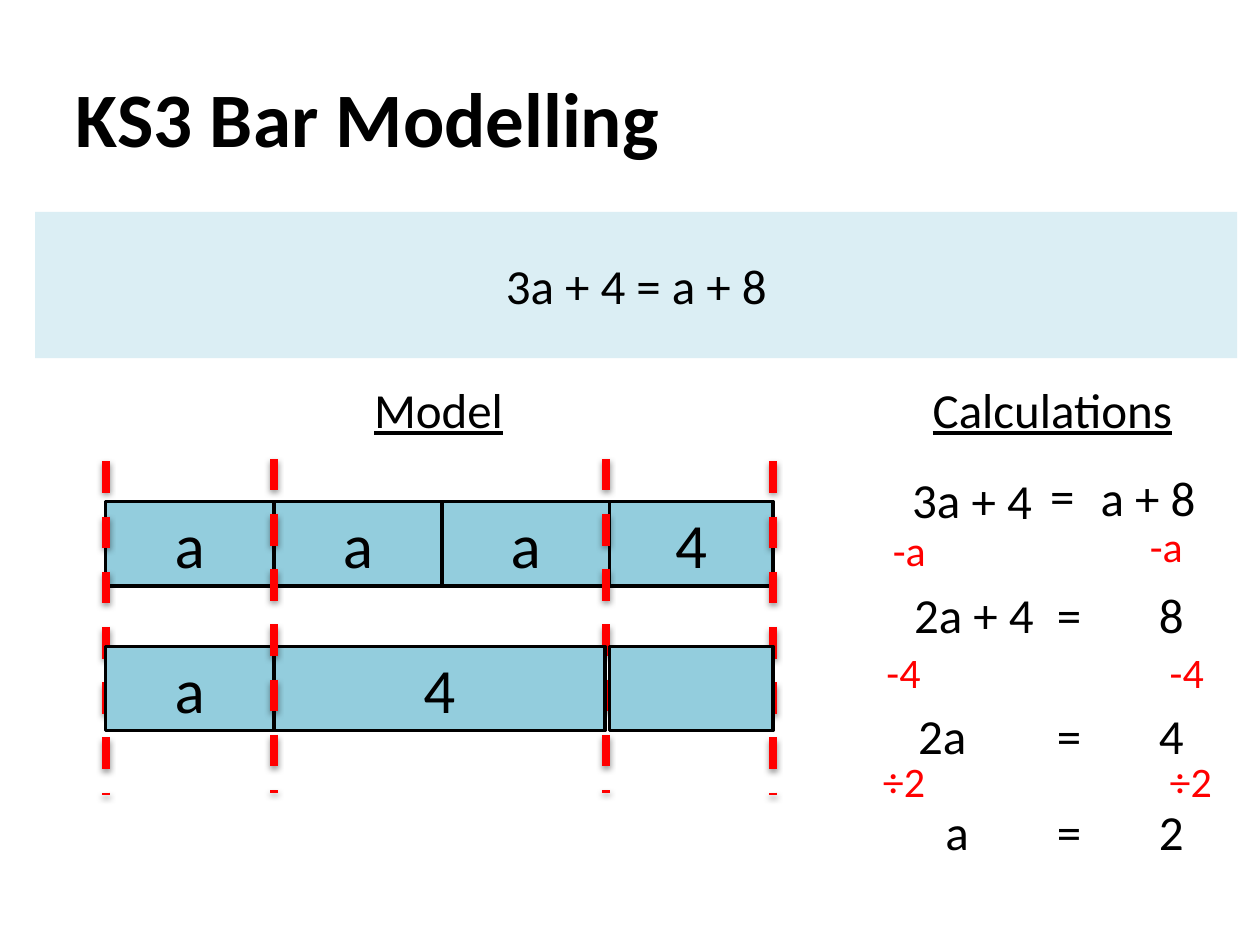
from typing import Any, NamedTuple

import pptx
import pptx.dml.color
import pptx.enum.dml
import pptx.enum.shapes
import pptx.enum.text
import pptx.oxml
import pptx.oxml.ns
import pptx.util

Cm = pptx.util.Cm
ALIGN = pptx.enum.text.PP_ALIGN
ANCHOR = pptx.enum.text.MSO_ANCHOR

BLACK, RED, WHITE = "000000", "FF0000", "FFFFFF"
BAR_FILL, BANNER_FILL = "93CDDD", "DBEEF4"
BAR_HEIGHT = 1.7
TEXT_HEIGHT = 1.35
EQUATION_TABS = ((21.55, "ctr"), (23.61, "ctr"))
OPERATION_TABS = ((23.58, "l"),)


class Box(NamedTuple):
    left: float
    top: float
    width: float
    height: float


class Bar(NamedTuple):
    left: float
    right: float
    label: str


class Token(NamedTuple):
    left: float
    top: float
    width: float
    text: str


class Step(NamedTuple):
    """A calculation line: its text begins at start, tabs are slide positions."""
    left: float
    top: float
    width: float
    start: float
    text: str
    size: int = 28
    color: str = BLACK
    tabs: tuple = EQUATION_TABS


def rgb(color: str) -> pptx.dml.color.RGBColor:
    return pptx.dml.color.RGBColor.from_string(color)


def lengths(box: Box) -> list:
    return [Cm(value) for value in box]


def write(shape: Any, text: str, size: int, color: str = BLACK,
          align: Any = ALIGN.CENTER, anchor: Any = ANCHOR.TOP,
          **font_format: Any) -> Any:
    frame = shape.text_frame
    frame.word_wrap = True
    frame.vertical_anchor = anchor
    paragraph = frame.paragraphs[0]
    paragraph.alignment = align
    run = paragraph.add_run()
    run.text = text
    values = {"name": "Calibri", "size": pptx.util.Pt(size), **font_format}
    for name, value in values.items():
        setattr(run.font, name, value)
    run.font.color.rgb = rgb(color)
    return paragraph


def add_rectangle(slide: Any, box: Box, fill: str, outlined: bool = False) -> Any:
    shape = slide.shapes.add_shape(
        pptx.enum.shapes.MSO_SHAPE.RECTANGLE, *lengths(box))
    shape.shadow.inherit = False
    shape.fill.solid()
    shape.fill.fore_color.rgb = rgb(fill)
    if outlined:
        shape.line.color.rgb = rgb(BLACK)
        shape.line.width = pptx.util.Pt(2)
    else:
        shape.line.fill.background()
    return shape


def add_bars(slide: Any, top: float, bars: tuple) -> None:
    for bar in bars:
        box = Box(bar.left, top, bar.right - bar.left, BAR_HEIGHT)
        shape = add_rectangle(slide, box, BAR_FILL, outlined=True)
        if bar.label:
            write(shape, bar.label, 36, anchor=ANCHOR.MIDDLE)


def add_guide(slide: Any, x: float, top: float) -> None:
    """Dashed vertical line with a soft shadow."""
    guide = slide.shapes.add_connector(
        pptx.enum.shapes.MSO_CONNECTOR.STRAIGHT,
        Cm(x), Cm(top), Cm(x), Cm(top + 6.73))
    guide.line.color.rgb = rgb(RED)
    guide.line.width = pptx.util.Pt(4.5)
    guide.line.dash_style = pptx.enum.dml.MSO_LINE.DASH
    guide._element.spPr.append(pptx.oxml.parse_xml(
        f'<a:effectLst {pptx.oxml.ns.nsdecls("a")}>'
        '<a:outerShdw blurRad="40000" dist="20000" dir="5400000" rotWithShape="0">'
        '<a:srgbClr val="000000"><a:alpha val="38000"/></a:srgbClr>'
        '</a:outerShdw></a:effectLst>'))


def add_token(slide: Any, token: Token) -> None:
    box = Box(token.left, token.top, token.width, TEXT_HEIGHT)
    write(slide.shapes.add_textbox(*lengths(box)), token.text, 28)


def add_step(slide: Any, step: Step) -> None:
    box = Box(step.left, step.top, step.width, TEXT_HEIGHT)
    shape = slide.shapes.add_textbox(*lengths(box))
    shape.text_frame.margin_left = Cm(step.start - step.left)
    paragraph = write(shape, step.text, step.size, step.color, ALIGN.LEFT)
    if "\t" in step.text:
        stops = "".join(f'<a:tab pos="{Cm(position - step.start)}" algn="{kind}"/>'
                        for position, kind in step.tabs)
        paragraph._p.get_or_add_pPr().append(pptx.oxml.parse_xml(
            f'<a:tabLst {pptx.oxml.ns.nsdecls("a")}>{stops}</a:tabLst>'))


def add_operation(slide: Any, left: float, top: float, width: float,
                  text: str) -> None:
    add_step(slide, Step(left, top, width, left + 0.45, text, 24, RED,
                         OPERATION_TABS))


def main() -> None:
    presentation = pptx.Presentation()
    presentation.slide_width, presentation.slide_height = Cm(25.4), Cm(19.05)
    slide = presentation.slides.add_slide(presentation.slide_layouts[5])

    # Title
    title = slide.shapes.title
    title.left, title.top, title.width, title.height = lengths(
        Box(1.27, 0.76, 16.2, 3.18))
    write(title, "KS3 Bar Modelling", 44, align=ALIGN.LEFT,
          anchor=ANCHOR.MIDDLE, bold=True)

    # Panels and the equation banner
    for box, heading in ((Box(0.71, 7.52, 16.26, 9.75), "Model"),
                         (Box(17.48, 7.52, 7.47, 9.75), "Calculations")):
        write(add_rectangle(slide, box, WHITE), heading, 28, underline=True)
    banner = add_rectangle(slide, Box(0.71, 4.27, 24.23, 2.95), BANNER_FILL)
    write(banner, "3a + 4 = a + 8", 28, anchor=ANCHOR.MIDDLE)

    # Bar model: the lower bar covers all guides but the one after the first a
    add_bars(slide, 10.11, (Bar(2.13, 5.52, "a"), Bar(5.52, 8.91, "a"),
                            Bar(8.91, 12.29, "a"), Bar(12.29, 15.58, "4")))
    for x, top in ((15.58, 9.3), (2.13, 9.3), (12.22, 9.25)):
        add_guide(slide, x, top)
    add_bars(slide, 13.03, (Bar(2.13, 5.52, "a"), Bar(5.52, 12.2, "4"),
                            Bar(12.29, 15.58, "")))
    add_guide(slide, 5.52, 9.25)

    # Starting equation
    for token in (Token(17.96, 9.35, 1.83, "3a"), Token(19.28, 9.37, 1.83, "+ 4"),
                  Token(20.5, 9.25, 1.83, "="), Token(21.62, 9.3, 3.05, "a + 8")):
        add_token(slide, token)

    # Simplified equations
    for step in (Step(17.96, 11.66, 6.6, 18.43, "2a + 4\t=\t8"),
                 Step(18.03, 14.1, 6.53, 18.51, "2a\t=\t4"),
                 Step(18.14, 16.03, 6.53, 19.06, "a\t=\t2")):
        add_step(slide, step)

    # Operations on both sides
    for operation in ((17.55, 10.44, 2.13, "-a"), (22.73, 10.36, 1.85, "-a"),
                      (17.42, 12.9, 7.47, "-4\t-4"),
                      (17.35, 15.11, 7.47, "÷2\t÷2")):
        add_operation(slide, *operation)

    presentation.save("out.pptx")


if __name__ == "__main__":
    main()
